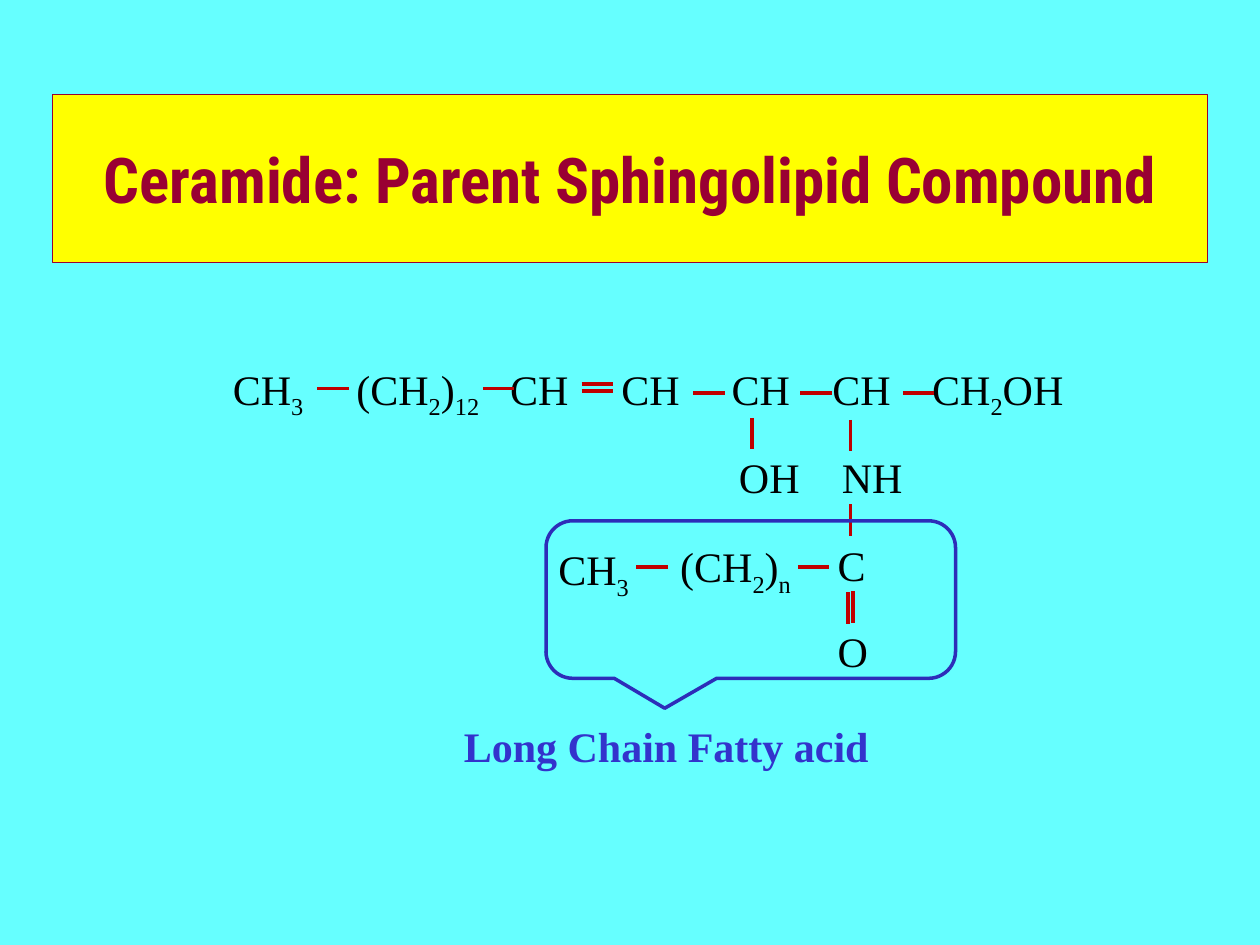
from lxml import etree
from pptx import Presentation
from pptx import util as u
from pptx.dml.color import RGBColor
from pptx.enum import shapes, text
from pptx.oxml import ns

SKY = RGBColor(0x66, 0xFF, 0xFF)
YELLOW = RGBColor(0xFF, 0xFF, 0x00)
MAROON = RGBColor(0x99, 0x00, 0x33)
BLACK = RGBColor(0x00, 0x00, 0x00)
RED = RGBColor(0xC0, 0x00, 0x00)
BLUE = RGBColor(0x33, 0x33, 0xCC)
OUTLINE = RGBColor(0x2D, 0x2D, 0xB9)

SERIF = "Times New Roman"
CELL = u.Inches(10) / 120
BOND = 3
CHAIN = "CH_3_\t(CH_2_)_12_\tCH\tCH\tCH\tCH\tCH_2_OH"
CHAIN_TABS = (11.76, 26.4, 37, 47.5, 57.1, 66.6)

GROUPS = (
    ("OH", 69.2, 42.4, 8.2),
    ("NH", 79, 42.4, 8.2),
    ("C", 78.6, 50.8, 5),
    ("O", 78.6, 59, 5.3),
    ("(CH_2_)_n_", 63.6, 50.9, 13.3),
    ("CH_3_", 52, 51.2, 10.3),
)
ACROSS = (
    (30.2, 37), (46, 37), (55.4, 36.6), (55.4, 37.2), (66, 37.4),
    (76.2, 37.4), (86, 37.4), (60.6, 54), (76, 54),
)
DOWN = ((71.6, 39.8), (81, 40), (81, 48), (80.75, 56.4), (81.25, 56.3))


def grid(*cells):
    return [u.Emu(round(cell * CELL)) for cell in cells]


def style_font(font, name, size, color, bold=False):
    font.name = name
    font.size = u.Pt(size)
    font.color.rgb = color
    font.bold = bold


def add_tabs(para, stops):
    tabs = etree.SubElement(para._p.get_or_add_pPr(), ns.qn("a:tabLst"))
    for stop in grid(*stops):
        etree.SubElement(tabs, ns.qn("a:tab"), pos=str(stop), algn="l")


def add_formula(page, formula, left, top, width, color=BLACK, bold=False, stops=()):
    box = page.shapes.add_textbox(*grid(left, top, width, 6))
    box.text_frame.word_wrap = False
    para = box.text_frame.paragraphs[0]
    if stops:
        add_tabs(para, stops)
    for index, part in enumerate(formula.split("_")):
        if part:
            span = para.add_run()
            span.text = part
            style_font(span.font, SERIF, 24, color, bold)
            if index % 2:
                span.font._element.set("baseline", "-25000")


def add_bond(page, left, top, across, down):
    bond = page.shapes.add_connector(
        shapes.MSO_CONNECTOR.STRAIGHT, *grid(left, top, left + across, top + down))
    bond.line.color.rgb = RED
    bond.line.width = u.Pt(2.25)
    etree.SubElement(bond._element.spPr, ns.qn("a:effectLst"))


def add_outlined(page, kind, cells, color, width):
    shape = page.shapes.add_shape(kind, *grid(*cells))
    shape.shadow.inherit = False
    shape.line.color.rgb = color
    shape.line.width = u.Pt(width)
    return shape


def add_title(page, wording):
    banner = add_outlined(page, shapes.MSO_SHAPE.RECTANGLE, (5, 9, 110, 16), MAROON, 0.75)
    banner.fill.solid()
    banner.fill.fore_color.rgb = YELLOW
    frame = banner.text_frame
    frame.text = wording
    frame.word_wrap = True
    frame.vertical_anchor = text.MSO_ANCHOR.MIDDLE
    para = frame.paragraphs[0]
    para.alignment = text.PP_ALIGN.CENTER
    style_font(para.runs[0].font, "Roboto Condensed", 36, MAROON, True)


def add_callout(page):
    callout = add_outlined(
        page, shapes.MSO_SHAPE.ROUNDED_RECTANGULAR_CALLOUT, (52, 49.6, 39, 15), OUTLINE, 2)
    callout.fill.background()
    for index, value in enumerate((-0.21, 0.69, 0.17)):
        callout.adjustments[index] = value


def main():
    deck = Presentation()
    deck.slide_width, deck.slide_height = grid(120, 90)
    page = deck.slides.add_slide(deck.slide_layouts[6])
    page.background.fill.solid()
    page.background.fill.fore_color.rgb = SKY

    add_title(page, "Ceramide: Parent Sphingolipid Compound")
    add_formula(page, CHAIN, 21, 34, 82.4, stops=CHAIN_TABS)
    for group in GROUPS:
        add_formula(page, *group)
    for left, top in ACROSS:
        add_bond(page, left, top, BOND, 0)
    for left, top in DOWN:
        add_bond(page, left, top, 0, BOND)
    add_formula(page, "Long Chain Fatty acid", 43, 68, 41, BLUE, True)
    add_callout(page)
    deck.save("out.pptx")


if __name__ == "__main__":
    main()
